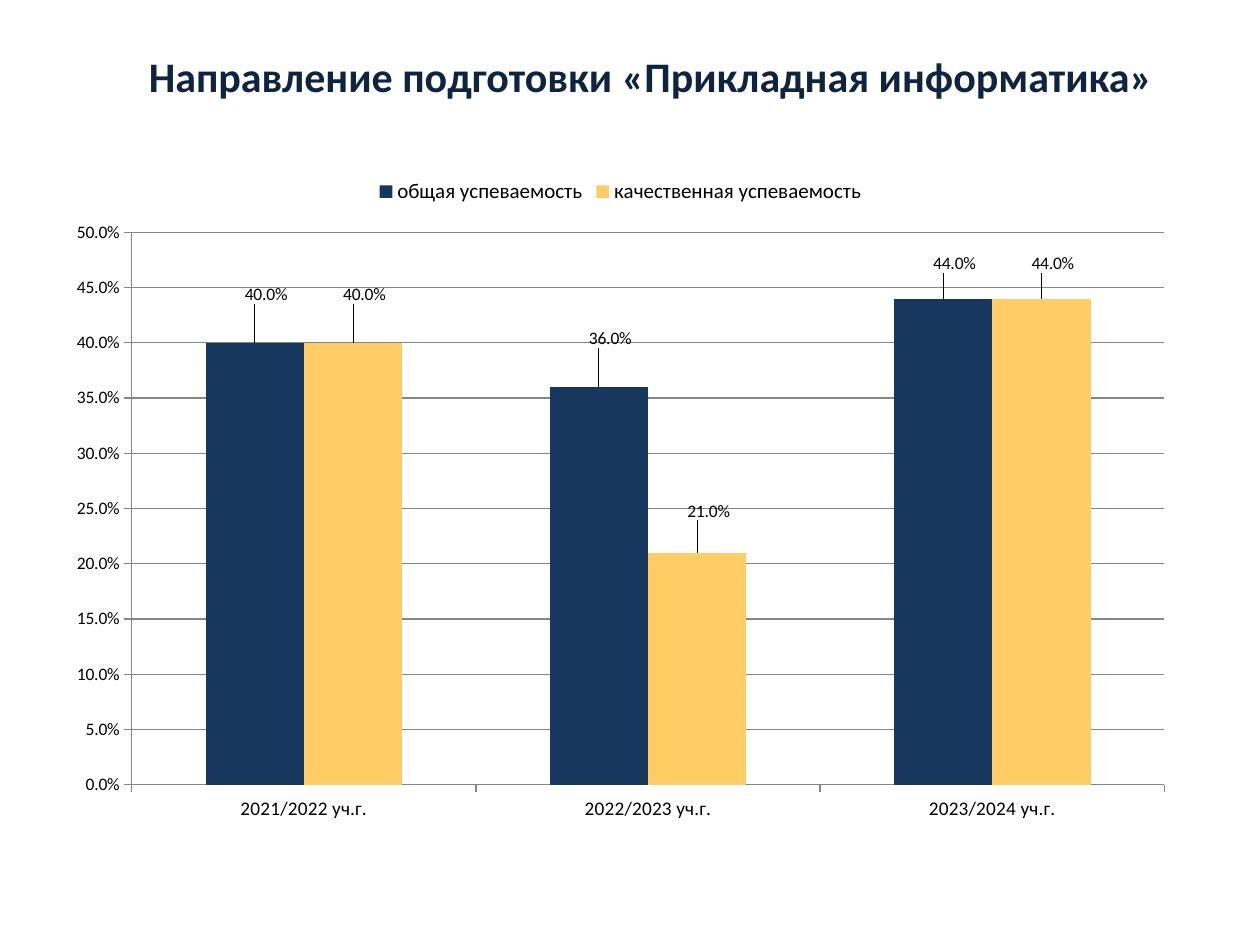
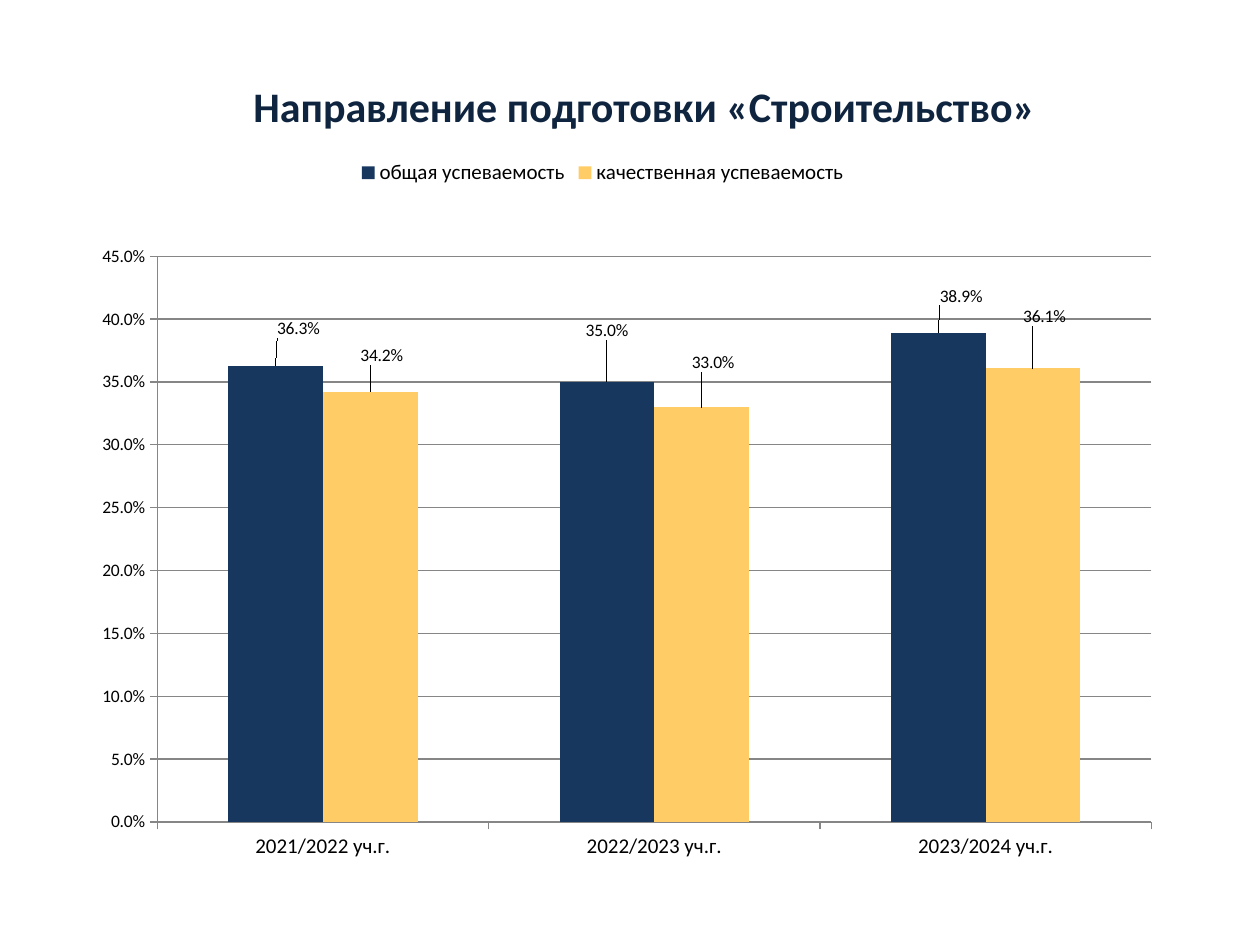
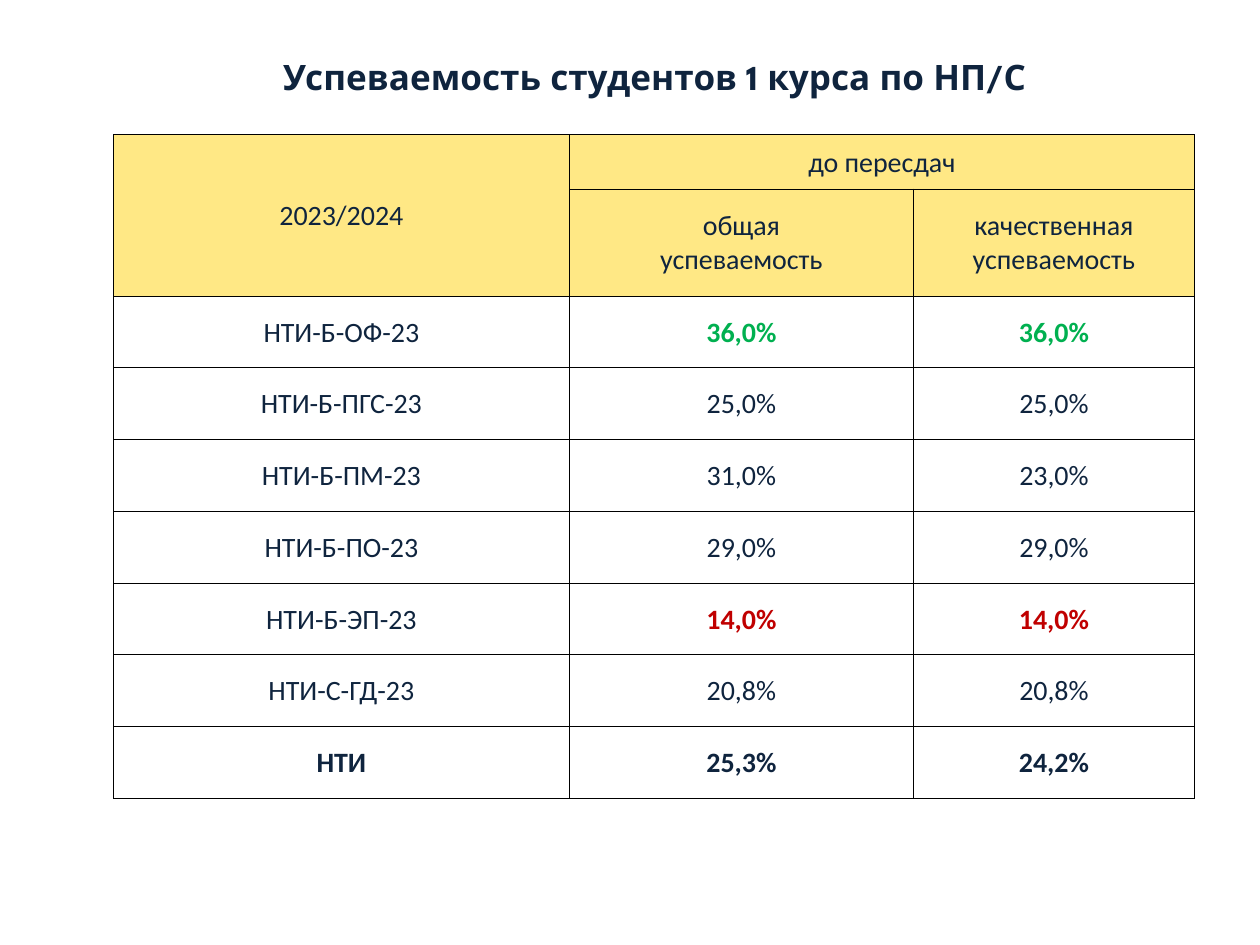
from dataclasses import dataclass
from lxml.etree import SubElement
from pptx import Presentation
from pptx.chart.data import CategoryChartData
from pptx.dml.color import RGBColor
from pptx.enum.chart import XL_CHART_TYPE, XL_LABEL_POSITION, XL_LEGEND_POSITION, XL_TICK_MARK
from pptx.enum.text import MSO_ANCHOR, MSO_AUTO_SIZE, PP_ALIGN
from pptx.oxml import parse_xml
from pptx.oxml.ns import nsdecls, qn
from pptx.util import Pt


@dataclass(frozen=True)
class Theme:
    ink: RGBColor = RGBColor.from_string("0F243E")
    navy: RGBColor = RGBColor.from_string("17375E")
    gold: RGBColor = RGBColor.from_string("FFCC66")
    head: RGBColor = RGBColor.from_string("FFE885")
    good: RGBColor = RGBColor.from_string("00B050")
    bad: RGBColor = RGBColor.from_string("C00000")
    grid: RGBColor = RGBColor.from_string("868686")
    black: RGBColor = RGBColor.from_string("000000")
    font: str = "Calibri"
    accent: str = "League Spartan"
    title: int = 24
    sub: int = 20
    cell: int = 16
    legend: int = 12
    label: int = 10


theme = Theme()


def style(par, size, color, bold, font=theme.font):
    par.alignment = PP_ALIGN.CENTER
    par.font.name = font
    par.font.size = Pt(size)
    par.font.bold = bold
    par.font.color.rgb = color


def layout(x, y, w=None, h=None):
    root = parse_xml(f"<c:layout {nsdecls('c')}/>")
    manual = SubElement(root, qn("c:manualLayout"))
    parts = {"x": x, "y": y}
    if w:
        parts = {"layoutTarget": "inner", "xMode": "edge", "yMode": "edge", **parts, "w": w, "h": h}
    for name, val in parts.items():
        SubElement(manual, qn(f"c:{name}")).set("val", str(val))
    return root


deck = Presentation()
deck.slide_width, deck.slide_height = Pt(720), Pt(540)
pages = [deck.slides.add_slide(deck.slide_layouts[6]) for _ in range(3)]

titles = [
    ("Направление подготовки «Прикладная информатика»", (20.2, 9.4, 703.4, 55.4),
     theme.title, theme.font, MSO_ANCHOR.BOTTOM, 3.6, 7.2),
    ("Направление подготовки «Строительство»", (16.6, 42.5, 703.4, 39.6),
     theme.title, theme.font, MSO_ANCHOR.BOTTOM, 3.6, 7.2),
    ("Успеваемость студентов 1 курса по НП/С", (87.8, 20.9, 572.4, 38.9),
     theme.sub, theme.accent, MSO_ANCHOR.TOP, 10.8, 3.6),
]
frames = []
for page, (text, box, size, font, anchor, top, base) in zip(pages, titles):
    frame = page.shapes.add_textbox(*map(Pt, box)).text_frame
    frame.word_wrap = True
    frame.vertical_anchor = anchor
    frame.margin_left = frame.margin_right = Pt(7.2)
    frame.margin_top, frame.margin_bottom = Pt(top), Pt(base)
    frame.text = text
    style(frame.paragraphs[0], size, theme.ink, True, font)
    frames.append(frame)
frames[1].paragraphs[0].line_spacing = 1.15
frames[1].paragraphs[0].space_after = Pt(10)
frames[2].auto_size = MSO_AUTO_SIZE.SHAPE_TO_FIT_TEXT

years = ["2021/2022 уч.г.", "2022/2023 уч.г.", "2023/2024 уч.г."]
names = ["общая успеваемость", "качественная успеваемость"]
charts = [
    ((31, 94.3, 647.3, 382.3), 0.5, 11, None,
     [(0.4, 0.36, 0.44), (0.4, 0.21, 0.44)],
     [[(0.01, -0.05), (0.01, -0.05), (0.01, -0.03)],
      [(0.01, -0.05), (0.01, -0.04), (0.01, -0.03)]]),
    ((18, 83.5, 653, 419.8), 0.45, 12, (0.11, 0.15, 0.87, 0.77),
     [(0.363, 0.35, 0.389), (0.342, 0.33, 0.361)],
     [[(0.02, -0.03), (0, -0.05), (0.02, -0.03)],
      [(0.01, -0.03), (0.01, -0.04), (0.01, -0.05)]]),
]
for page, (box, peak, size, plan, rates, shifts) in zip(pages, charts):
    data = CategoryChartData(number_format="0.0%")
    data.categories = years
    for name, vals in zip(names, rates):
        data.add_series(name, vals)
    chart = page.shapes.add_chart(XL_CHART_TYPE.COLUMN_CLUSTERED, *map(Pt, box), data).chart
    chart.has_title = False
    chart.font.name = theme.font
    chart.font.size = Pt(theme.label)
    chart.font.color.rgb = theme.black
    chart.has_legend = True
    chart.legend.position = XL_LEGEND_POSITION.TOP
    chart.legend.include_in_layout = False
    chart.legend.font.size = Pt(theme.legend)

    years_axis, rate_axis = chart.category_axis, chart.value_axis
    years_axis.tick_labels.font.size = Pt(size)
    rate_axis.minimum_scale, rate_axis.maximum_scale = 0, peak
    rate_axis.major_unit = 0.05
    rate_axis.has_major_gridlines = True
    rate_axis.tick_labels.number_format = "0.0%"
    rate_axis.tick_labels.number_format_is_linked = False
    for axis in (years_axis, rate_axis):
        axis.major_tick_mark = XL_TICK_MARK.OUTSIDE
    for line in (years_axis.format.line, rate_axis.format.line, rate_axis.major_gridlines.format.line):
        line.color.rgb = theme.grid
        line.width = Pt(0.75)

    plot = chart.plots[0]
    plot.gap_width, plot.overlap = 150, 0
    plot.vary_by_categories = False
    for row, color, moves in zip(plot.series, (theme.navy, theme.gold), shifts):
        row.format.fill.solid()
        row.format.fill.fore_color.rgb = color
        row.invert_if_negative = False
        labels = row.data_labels
        labels.show_value = True
        labels.number_format = "0.0%"
        labels.number_format_is_linked = False
        labels.position = XL_LABEL_POSITION.OUTSIDE_END
        for spot, move in enumerate(moves):
            row.points[spot].data_label.position = XL_LABEL_POSITION.OUTSIDE_END
            labels._element.findall(qn("c:dLbl"))[spot].insert(1, layout(*move))
    if plan:
        area = chart._chartSpace.chart.plotArea
        for old in area.findall(qn("c:layout")):
            area.remove(old)
        area.insert(0, layout(*plan))

rows = [
    ("2023/2024", "до пересдач", ""),
    ("", "общая\nуспеваемость", "качественная успеваемость"),
    ("НТИ-Б-ОФ-23", "36,0%", "36,0%"),
    ("НТИ-Б-ПГС-23", "25,0%", "25,0%"),
    ("НТИ-Б-ПМ-23", "31,0%", "23,0%"),
    ("НТИ-Б-ПО-23", "29,0%", "29,0%"),
    ("НТИ-Б-ЭП-23", "14,0%", "14,0%"),
    ("НТИ-С-ГД-23", "20,8%", "20,8%"),
    ("НТИ", "25,3%", "24,2%"),
]
marks = {"36,0%": theme.good, "14,0%": theme.bad}
wide = [260.6, 196.6, 160.6]
tall = [31, 61.2] + [41] * 7
table = pages[2].shapes.add_table(
    len(rows), len(wide), Pt(64.8), Pt(77), Pt(sum(wide)), Pt(sum(tall))).table
table.first_row = table.horz_banding = False
for col, size in zip(table.columns, wide):
    col.width = Pt(size)
for row, size in zip(table.rows, tall):
    row.height = Pt(size)
table.cell(0, 0).merge(table.cell(1, 0))
table.cell(0, 1).merge(table.cell(0, 2))
for r, texts in enumerate(rows):
    for c, text in enumerate(texts):
        cell = table.cell(r, c)
        cell.vertical_anchor = MSO_ANCHOR.MIDDLE
        cell.margin_left = cell.margin_right = cell.margin_top = Pt(0.7)
        cell.margin_bottom = Pt(0)
        for side in ("lnL", "lnR", "lnT", "lnB"):
            edge = SubElement(cell._tc.get_or_add_tcPr(), qn(f"a:{side}"), w=str(Pt(0.5)))
            SubElement(SubElement(edge, qn("a:solidFill")), qn("a:srgbClr"), val=str(theme.black))
        if r < 2:
            cell.fill.solid()
            cell.fill.fore_color.rgb = theme.head
        else:
            cell.fill.background()
        if text:
            cell.text = text
            bold = text in marks or r == len(rows) - 1
            for par in cell.text_frame.paragraphs:
                style(par, theme.cell, marks.get(text, theme.ink), bold)

deck.save("out.pptx")
